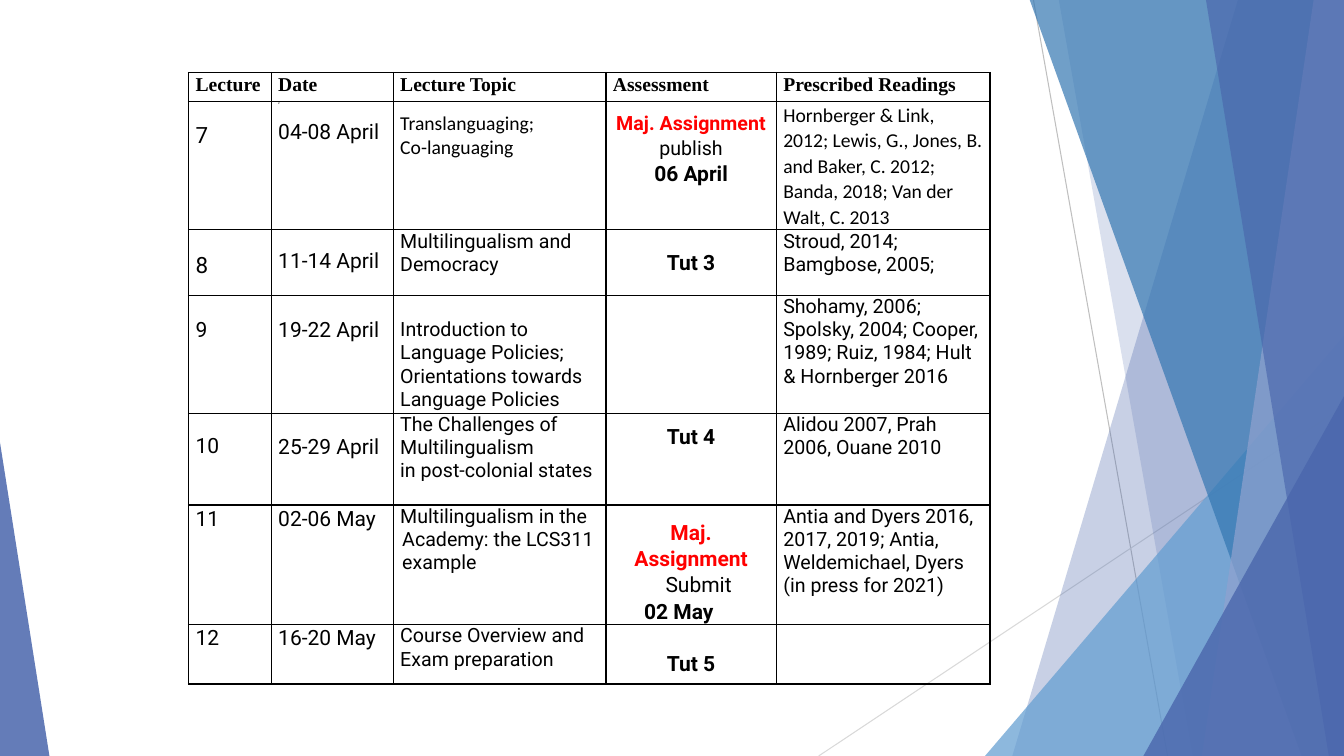
from dataclasses import dataclass

from lxml.etree import SubElement
from pptx import Presentation
from pptx.dml.color import RGBColor
from pptx.enum.shapes import MSO_CONNECTOR, MSO_SHAPE
from pptx.enum.text import PP_ALIGN
from pptx.oxml.ns import qn
from pptx.util import Pt

EMU_PER_PX = 9144  # 100 px to the inch
SLIDE_WIDTH, SLIDE_HEIGHT = 1333, 750

BLACK = RGBColor(0x00, 0x00, 0x00)
RED = RGBColor(0xFF, 0x00, 0x00)
INDIGO = RGBColor(0x4A, 0x66, 0xAC)
SKY = RGBColor(0x62, 0x9D, 0xD1)
BLUE = RGBColor(0x34, 0x77, 0xB2)
PERIWINKLE = RGBColor(0x90, 0xA2, 0xCF)
GREY = RGBColor(0xBF, 0xBF, 0xBF)
LIGHT_GREY = RGBColor(0xD9, 0xD9, 0xD9)

COLUMN_WIDTHS = [82, 121, 211, 169, 212]
ROW_HEIGHTS = [29, 127, 65, 117, 91, 118, 59]
CELL_MARGIN = 7

# Top x, top x, bottom x, bottom x of each full-height band, then fill and opacity
BANDS = [
    (1228, 1333, 1333, 1004, INDIGO, 30),
    (1050, 1333, 1333, 1183, INDIGO, 20),
    (1021, 1333, 1333, 1291, BLUE, 70),
    (1303, 1333, 1333, 1192, PERIWINKLE, 70),
    (1196, 1333, 1333, 1318, INDIGO, 65),
]


@dataclass
class Line:
    """One paragraph; tail is a plain black run after the text."""
    text: str
    size: int = 15
    bold: bool = False
    color: RGBColor = BLACK
    font: str = "Roboto"
    spacing: float = 1.07
    align: PP_ALIGN = PP_ALIGN.LEFT
    indent: int = 0
    hanging: int = 0
    before: int = 0
    tail: str = ""


def heading(text):
    return 0, [Line(text, 14, bold=True, font="Times New Roman")]


def plain(text, gap=0):
    return gap, [Line(text)]


def body(*texts, gap=0, **text_format):
    return gap, [Line(text, 14, **{"spacing": 1.0, **text_format}) for text in texts]


def centred(text, **text_format):
    return Line(text, align=PP_ALIGN.CENTER, **text_format)


def tutorial(number, gap):
    return gap, [centred(f"Tut {number}", bold=True)]


EMPTY = (0, [])

# Each cell is (gap above the text, lines)
SCHEDULE = [
    [heading(text) for text in
     ("Lecture", "Date", "Lecture Topic", "Assessment", "Prescribed Readings")],
    [(19, [Line("7", 16)]),
     (0, [Line("2", 2), Line("04-08 April", before=9)]),
     body("Translanguaging;", "Co-languaging", gap=10, font="Calibri"),
     (9, [centred("Maj. Assignment ", size=14, bold=True, color=RED, tail="publish"),
          centred("06 April", bold=True)]),
     body("Hornberger & Link, 2012; Lewis, G., Jones, B. and Baker, C. 2012; "
          "Banda, 2018; Van der Walt, C. 2013", font="Calibri", spacing=1.07)],
    [(21, [Line("8", 16)]),
     plain("11-14 April", 17),
     body("Multilingualism and", "Democracy"),
     tutorial(3, 19),
     body("Stroud, 2014; Bamgbose, 2005;")],
    [plain("9", 21),
     plain("19-22 April", 21),
     body("Introduction to Language Policies; Orientations towards Language Policies",
          gap=23),
     EMPTY,
     body("Shohamy, 2006; Spolsky, 2004; Cooper, 1989; Ruiz, 1984; "
          "Hult & Hornberger 2016")],
    [plain("10", 19),
     plain("25-29 April", 20),
     body("The Challenges of Multilingualism", "in post-colonial states"),
     tutorial(4, 10),
     body("Alidou 2007, Prah 2006, Ouane 2010")],
    [plain("11"),
     plain("02-06 May"),
     body("Multilingualism in the Academy: the LCS311 example", indent=2, hanging=2),
     (14, [centred("Maj. Assignment", bold=True, color=RED),
           centred("Submit", indent=15),
           Line("02 May", bold=True, indent=31)]),
     body("Antia and Dyers 2016, 2017, 2019; Antia, Weldemichael, Dyers "
          "(in press for 2021)")],
    [plain("12"),
     plain("16-20 May"),
     body("Course Overview and Exam preparation"),
     tutorial(5, 26),
     EMPTY],
]


def px(length):
    return length * EMU_PER_PX


def paint(shape, color, opacity):
    shape.shadow.inherit = False
    shape.line.fill.background()
    shape.fill.solid()
    shape.fill.fore_color.rgb = color
    color_element = shape._element.spPr.find(".//" + qn("a:srgbClr"))
    SubElement(color_element, qn("a:alpha"), val=str(opacity * 1000))


def add_band(slide, top_left, top_right, bottom_right, bottom_left, color, opacity):
    builder = slide.shapes.build_freeform(top_left, -1, scale=EMU_PER_PX)
    builder.add_line_segments([(top_right, -1), (bottom_right, SLIDE_HEIGHT),
                               (bottom_left, SLIDE_HEIGHT)])
    paint(builder.convert_to_shape(), color, opacity)


def add_triangle(slide, left, top, width, apex, color, opacity):
    """Triangle standing on the slide's bottom edge; apex is 0 (left) to 1 (right)."""
    shape = slide.shapes.add_shape(MSO_SHAPE.ISOSCELES_TRIANGLE, px(left), px(top),
                                   px(width), px(SLIDE_HEIGHT - top))
    shape.adjustments[0] = apex
    paint(shape, color, opacity)


def add_line(slide, start, end, color):
    connector = slide.shapes.add_connector(
        MSO_CONNECTOR.STRAIGHT, *map(px, start), *map(px, end))
    connector.line.color.rgb = color
    connector.line.width = Pt(0.75)
    SubElement(connector._element.spPr, qn("a:effectLst"))


def write_run(paragraph, text, *, size, font, bold=False, color=BLACK):
    run = paragraph.add_run()
    run.text = text
    run.font.size = Pt(size)
    run.font.name = font
    run.font.bold = bold
    run.font.color.rgb = color


def write_line(paragraph, line):
    paragraph.alignment = line.align
    paragraph.line_spacing = line.spacing
    paragraph.space_before = Pt(line.before)
    properties = paragraph._p.get_or_add_pPr()
    properties.set("marL", str(px(line.indent)))
    properties.set("indent", str(px(-line.hanging)))
    write_run(paragraph, line.text, size=line.size, font=line.font,
              bold=line.bold, color=line.color)
    if line.tail:
        write_run(paragraph, line.tail, size=line.size, font=line.font)


def add_borders(cell):
    properties = cell._tc.get_or_add_tcPr()
    for side in ("lnL", "lnR", "lnT", "lnB"):
        border = SubElement(properties, qn(f"a:{side}"), w=str(Pt(1)))
        fill = SubElement(border, qn("a:solidFill"))
        SubElement(fill, qn("a:srgbClr"), val=str(BLACK))


def fill_cell(cell, gap, lines):
    cell.margin_left = cell.margin_right = px(CELL_MARGIN)
    cell.margin_top, cell.margin_bottom = px(gap), 0
    add_borders(cell)
    cell.fill.background()
    frame = cell.text_frame
    for index, line in enumerate(lines):
        write_line(frame.add_paragraph() if index else frame.paragraphs[0], line)


def add_schedule(slide, left, top):
    table = slide.shapes.add_table(
        len(ROW_HEIGHTS), len(COLUMN_WIDTHS), px(left), px(top),
        px(sum(COLUMN_WIDTHS)), px(sum(ROW_HEIGHTS))).table
    table.first_row = table.horz_banding = False
    for column, width in zip(table.columns, COLUMN_WIDTHS):
        column.width = px(width)
    for row, height, contents in zip(table.rows, ROW_HEIGHTS, SCHEDULE):
        row.height = px(height)
        for cell, (gap, lines) in zip(row.cells, contents):
            fill_cell(cell, gap, lines)


def main():
    presentation = Presentation()
    presentation.slide_width = px(SLIDE_WIDTH)
    presentation.slide_height = px(SLIDE_HEIGHT)
    slide = presentation.slides.add_slide(presentation.slide_layouts[6])
    add_line(slide, (1025, 0), (1158, 750), GREY)
    add_line(slide, (1333, 403), (812, 750), LIGHT_GREY)
    for band in BANDS[:2]:
        add_band(slide, *band)
    add_triangle(slide, 977, 333, 356, 1, SKY, 72)
    for band in BANDS[2:]:
        add_band(slide, *band)
    add_triangle(slide, 1134, 393, 199, 1, INDIGO, 80)
    add_triangle(slide, 0, 439, 49, 0, INDIGO, 85)
    add_schedule(slide, 187, 72)
    presentation.save("out.pptx")


if __name__ == "__main__":
    main()
